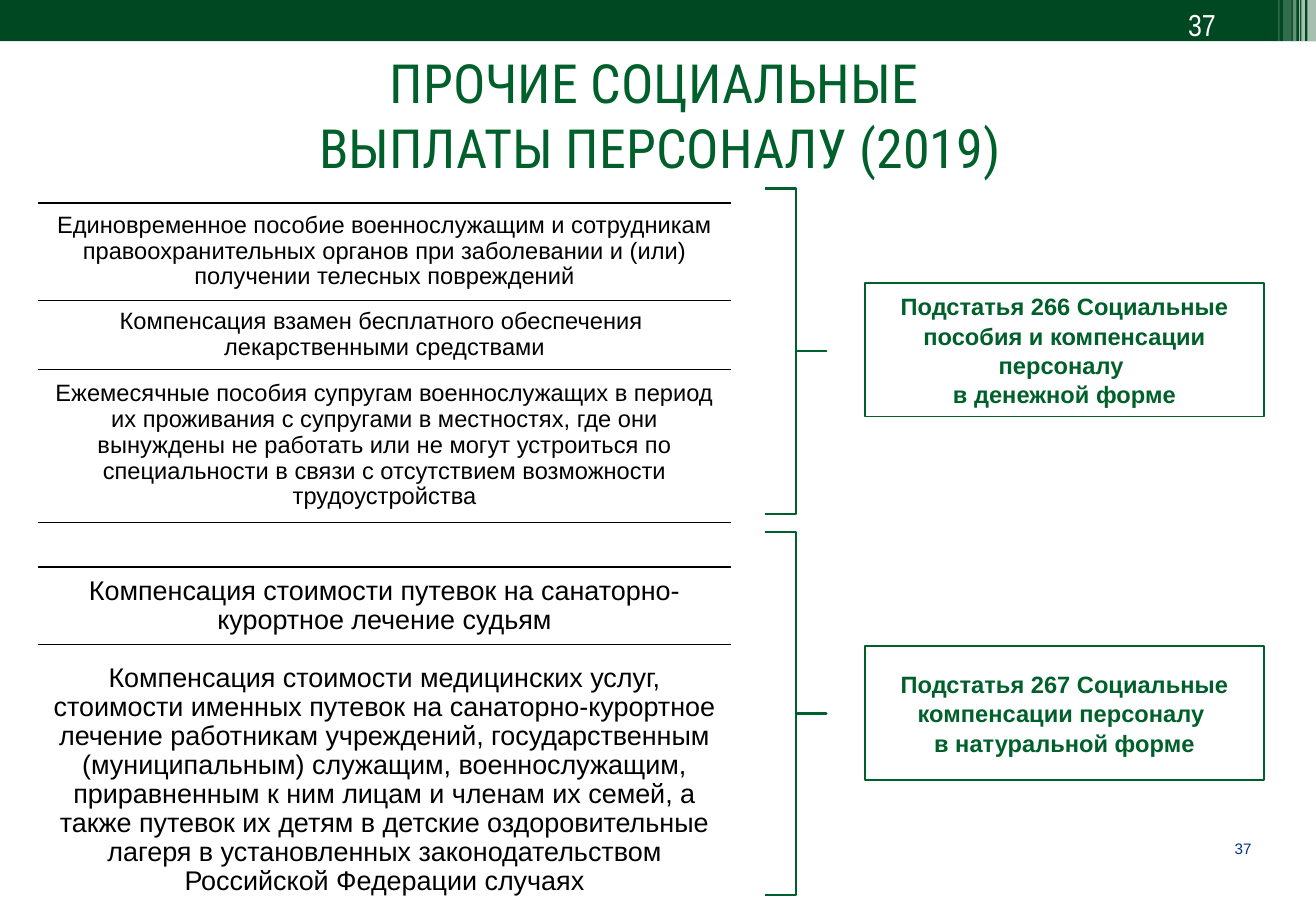
from dataclasses import dataclass

from lxml import etree
from pptx import Presentation
from pptx.dml.color import RGBColor
from pptx.enum.shapes import MSO_SHAPE
from pptx.enum.text import MSO_ANCHOR, MSO_AUTO_SIZE, PP_ALIGN
from pptx.oxml.ns import qn
from pptx.util import Inches, Pt

RECT, BRACE = MSO_SHAPE.RECTANGLE, MSO_SHAPE.RIGHT_BRACE
LEFT, CENTER, RIGHT = PP_ALIGN.LEFT, PP_ALIGN.CENTER, PP_ALIGN.RIGHT
TOP, MIDDLE = MSO_ANCHOR.TOP, MSO_ANCHOR.MIDDLE
NO_STYLE = "{2D5ABB26-0587-4C30-8999-92F81FD0307C}"


@dataclass(frozen=True)
class Theme:
    green: str = "00602B"
    bar: str = "004821"
    blue: str = "00338D"
    white: str = "FFFFFF"
    black: str = "000000"
    font: str = "Arial"
    narrow: str = "Arial Narrow"
    title_font: str = "Roboto Condensed"
    title: int = 32
    page: int = 18
    large: int = 16
    body: int = 14
    small: int = 9


THEME = Theme()
PAGE = "37"
WIDTH, HEIGHT = 10.83, 7.5

# left, width, height, opacity in percent
STRIPES = [
    (10.52, 0.01, 0.36, 30),
    (10.56, 0.07, 0.36, 20),
    (10.64, 0.03, 0.34, 40),
    (10.69, 0.01, 0.34, 60),
    (10.71, 0.03, 0.34, 65),
    (10.76, 0.07, 0.34, 65),
]

# row height, text, text size, width of the rule below
PAYMENTS = [
    (0.36, "", THEME.body, 1.5),
    (0.8, "Единовременное пособие военнослужащим и сотрудникам правоохранительных "
          "органов при заболевании и (или) получении телесных повреждений", THEME.body, 0.5),
    (0.57, "Компенсация взамен бесплатного обеспечения \nлекарственными средствами",
     THEME.body, 0.5),
    (1.26, "Ежемесячные пособия супругам военнослужащих в период их проживания с "
           "супругами в местностях, где они вынуждены не работать или не могут "
           "устроиться по специальности в связи с отсутствием возможности "
           "трудоустройства", THEME.body, 0.5),
    (0.37, "", THEME.body, 1.5),
    (0.64, "Компенсация стоимости путевок на санаторно-курортное лечение судьям",
     THEME.large, 0.5),
    (2.23, "Компенсация стоимости медицинских услуг, стоимости именных путевок на "
           "санаторно-курортное лечение работникам учреждений, государственным "
           "(муниципальным) служащим, военнослужащим, приравненным к ним лицам и "
           "членам их семей, а также путевок их детям в детские оздоровительные "
           "лагеря в установленных законодательством Российской Федерации случаях",
     THEME.large, 0.5),
]

# brace top and height, box top, text
GROUPS = [
    (1.55, 2.68, 2.33, "Подстатья 266 Социальные пособия и компенсации персоналу \n"
                       "в денежной форме"),
    (4.38, 2.99, 5.32, "Подстатья 267 Социальные компенсации персоналу \n"
                       "в натуральной форме"),
]


def rgb(color):
    return RGBColor.from_string(color)


def write(tf, text, size, color, font=THEME.font, bold=False, align=CENTER,
          anchor=MIDDLE, spacing=1.0):
    tf.word_wrap = True
    tf.vertical_anchor = anchor
    for i, line in enumerate(text.split("\n")):
        p = tf.add_paragraph() if i else tf.paragraphs[0]
        p.alignment = align
        p.line_spacing = spacing
        r = p.add_run()
        r.text = line
        r.font.size = Pt(size)
        r.font.name = font
        r.font.bold = bold
        r.font.color.rgb = rgb(color)


def add_shape(slide, kind, box, fill=None, line=None, weight=1, opacity=100):
    sp = slide.shapes.add_shape(kind, *map(Inches, box))
    sp.shadow.inherit = False
    if fill:
        sp.fill.solid()
        sp.fill.fore_color.rgb = rgb(fill)
        if opacity < 100:
            color = sp.fill._xPr.find(qn("a:solidFill"))[0]
            etree.SubElement(color, qn("a:alpha")).set("val", str(opacity * 1000))
    else:
        sp.fill.background()
    if line:
        sp.line.color.rgb = rgb(line)
        sp.line.width = Pt(weight)
    else:
        sp.line.fill.background()
    return sp


def add_text(slide, box, text, size, color, inset=True, **fmt):
    tf = slide.shapes.add_textbox(*map(Inches, box)).text_frame
    if not inset:
        tf.margin_left = tf.margin_right = tf.margin_top = tf.margin_bottom = 0
    write(tf, text, size, color, anchor=TOP, **fmt)


def add_header(slide, box):
    add_shape(slide, RECT, box, THEME.bar)
    left, top, width, _ = box
    for x, w, h, opacity in STRIPES:
        add_shape(slide, RECT, (left + x, top, w, h), THEME.white, opacity=opacity)
    add_text(slide, (left + width - 1.15, top, 0.9, 0.4), PAGE, THEME.page,
             THEME.white, font=THEME.narrow, align=LEFT)


def add_title(slide, box):
    title = slide.shapes.title
    title.left, title.top, title.width, title.height = map(Inches, box)
    title.text_frame.auto_size = MSO_AUTO_SIZE.NONE
    write(title.text_frame, "ПРОЧИЕ СОЦИАЛЬНЫЕ \nВЫПЛАТЫ ПЕРСОНАЛУ (2019)",
          THEME.title, THEME.green, font=THEME.title_font, anchor=TOP)


def rule_cell(cell, above, below):
    """Draw the horizontal rules of a cell; a width of 0 leaves one out."""
    tcPr = cell._tc.get_or_add_tcPr()
    rules = [("a:lnT", above), ("a:lnB", below)]
    for i, (tag, weight) in enumerate(rule for rule in rules if rule[1]):
        ln = etree.Element(qn(tag), w=str(Pt(weight)))
        fill = etree.SubElement(ln, qn("a:solidFill"))
        etree.SubElement(fill, qn("a:srgbClr"), val=THEME.black)
        tcPr.insert(i, ln)


def add_payments(slide, box):
    table = slide.shapes.add_table(len(PAYMENTS), 2, *map(Inches, box)).table
    table.first_row = table.horz_banding = False
    table._tbl.tblPr.find(qn("a:tableStyleId")).text = NO_STYLE
    gap = 0.5
    table.columns[0].width = Inches(box[2] - gap)
    table.columns[1].width = Inches(gap)
    above = 0
    for i, (height, text, size, below) in enumerate(PAYMENTS):
        table.rows[i].height = Inches(height)
        for cell in table.rows[i].cells:
            cell.fill.background()
            cell.margin_top = cell.margin_bottom = Inches(0.05 if text else 0)
            cell.margin_left = cell.margin_right = Inches(0.11)
        cell = table.cell(i, 0)
        rule_cell(cell, above, below)
        if text:
            cell.vertical_anchor = MIDDLE
            write(cell.text_frame, text, size, THEME.black, spacing=0.97)
        above = below


def add_group(slide, left, top, height, box_top, text):
    """Place a brace and the box that names the budget item beside it."""
    brace = add_shape(slide, BRACE, (left, top, 0.5, height), line=THEME.green, weight=1.5)
    brace.adjustments[0], brace.adjustments[1] = 0, 0.5
    sp = add_shape(slide, RECT, (left + 0.82, box_top, 3.28, 1.1), THEME.white, THEME.green)
    write(sp.text_frame, text, THEME.body, THEME.green, bold=True, spacing=1.04)


def main():
    prs = Presentation()
    prs.slide_width, prs.slide_height = Inches(WIDTH), Inches(HEIGHT)
    slide = prs.slides.add_slide(prs.slide_layouts[5])
    add_text(slide, (9.87, 6.91, 0.43, 0.16), PAGE, THEME.small, THEME.blue,
             inset=False, align=RIGHT)
    add_header(slide, (0, 0, WIDTH, 0.34))
    add_title(slide, (0.02, 0.36, WIDTH, 1.18))
    add_payments(slide, (0.31, 1.31, 6.21, 6.23))
    for group in GROUPS:
        add_group(slide, 6.3, *group)
    prs.save("out.pptx")


if __name__ == "__main__":
    main()
